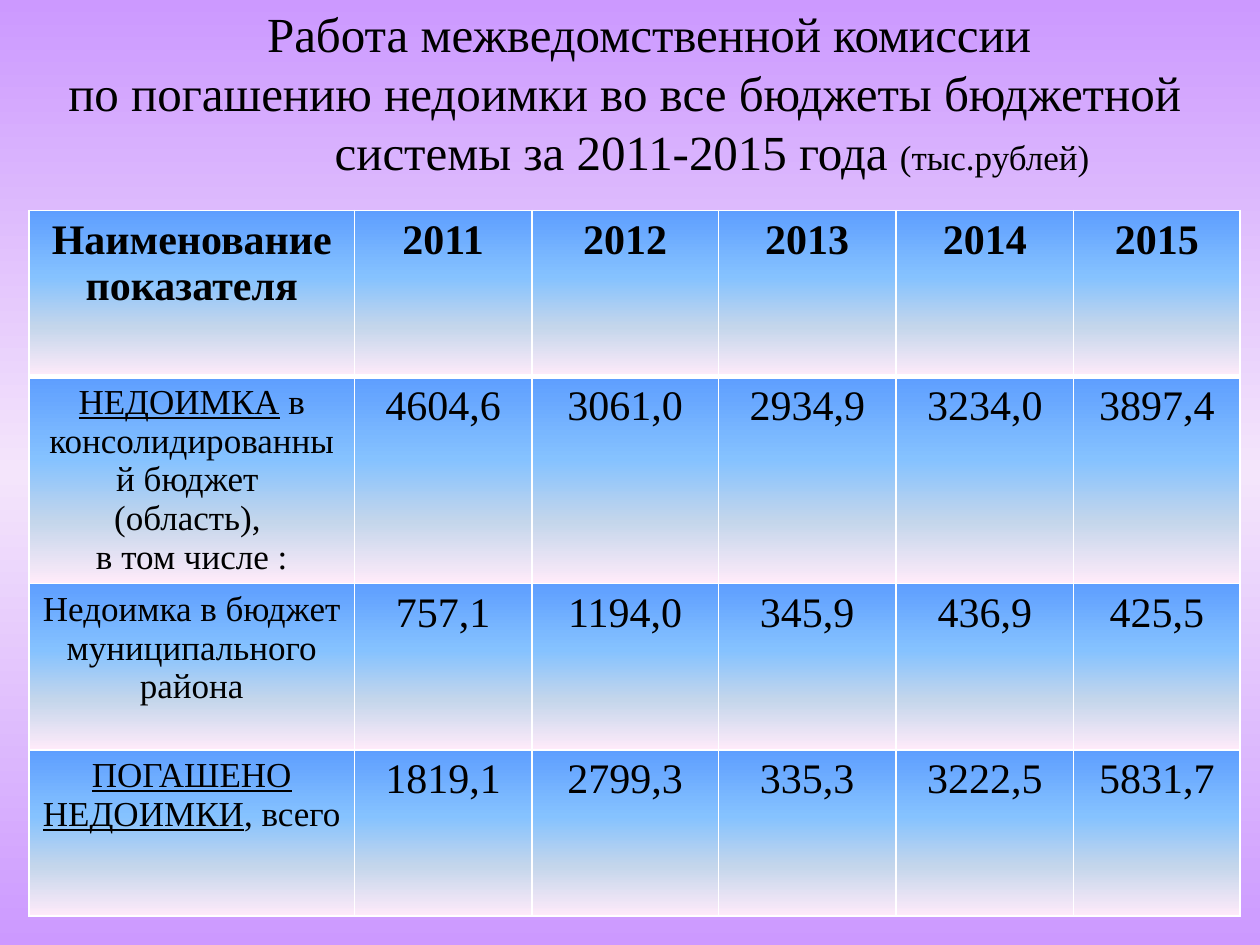
from lxml import etree
from pptx import Presentation
from pptx.dml.color import RGBColor
from pptx.enum import text
from pptx.oxml import ns
from pptx.util import Pt

COLORS = {"text": "000000", "border": "FFFFFF", "lilac": "CC99FF", "pale": "F4E5FB",
          "blue": "5E9EFF", "sky": "85C2FF", "mist": "C4D6EB", "blush": "FFEBFA"}
FONT = "Times New Roman"
PAGE_STOPS = [(0, "lilac"), (50, "pale"), (100, "lilac")]
CELL_STOPS = [(0, "blue"), (40, "sky"), (70, "mist"), (100, "blush")]


def add_gradient(parent, stops):
    """Append a top-to-bottom gradient fill."""
    grad = etree.SubElement(parent, ns.qn("a:gradFill"), rotWithShape="1")
    gs_list = etree.SubElement(grad, ns.qn("a:gsLst"))
    for pos, name in stops:
        gs = etree.SubElement(gs_list, ns.qn("a:gs"), pos=str(pos * 1000))
        etree.SubElement(gs, ns.qn("a:srgbClr"), val=COLORS[name])
    etree.SubElement(grad, ns.qn("a:lin"), ang="5400000", scaled="0")


def style(p, size, bold=False):
    p.alignment = text.PP_ALIGN.CENTER
    p.font.name = FONT
    p.font.size = Pt(size)
    p.font.bold = bold
    p.font.color.rgb = RGBColor.from_string(COLORS["text"])


prs = Presentation()
prs.slide_width, prs.slide_height = Pt(720), Pt(540)
s = prs.slides.add_slide(prs.slide_layouts[5])

# Background
s.background.fill.solid()
bg_pr = s.background.fill._xPr
bg_pr.remove(bg_pr[0])
add_gradient(bg_pr, PAGE_STOPS)
bg_pr.append(bg_pr[0])  # the effect list goes after the fill

# Title: the last two lines are offset by their own indents
title = s.shapes.title
title.left, title.top, title.width, title.height = Pt(28.8), Pt(16.56), Pt(691.2), Pt(72)
tf = title.text_frame
tf.word_wrap = True
tf.auto_size = text.MSO_AUTO_SIZE.NONE
tf.vertical_anchor = text.MSO_ANCHOR.MIDDLE
title_lines = [("Работа межведомственной комиссии ", 0),
               ("по погашению недоимки во все бюджеты бюджетной", 3),
               ("системы за 2011-2015 года ", 65)]
for i, (line, indent) in enumerate(title_lines):
    p = tf.paragraphs[0] if i == 0 else tf.add_paragraph()
    p.add_run().text = line
    style(p, 28)
    p._p.get_or_add_pPr().set("marL", str(Pt(indent)))
tf.paragraphs[1].alignment = text.PP_ALIGN.LEFT
r = p.add_run()
r.text = "(тыс.рублей)"
r.font.size = Pt(20)

# Table data: a label is a list of paragraphs, each an (underlined, plain) pair
rows = [
    ([("", "Наименование показателя")], ["2011", "2012", "2013", "2014", "2015"]),
    ([("НЕДОИМКА", " в консолидированный бюджет "), ("", "(область), "),
      ("", "в том числе :")],
     ["4604,6", "3061,0", "2934,9", "3234,0", "3897,4"]),
    ([("", "Недоимка в бюджет муниципального района")],
     ["757,1", "1194,0", "345,9", "436,9", "425,5"]),
    ([("ПОГАШЕНО НЕДОИМКИ", ", всего")],
     ["1819,1", "2799,3", "335,3", "3222,5", "5831,7"]),
]
col_widths = [185.76, 101.52, 106.56, 101.52, 101.52, 95.04]
row_height = 95.04

table = s.shapes.add_table(len(rows), len(col_widths), Pt(16.7), Pt(120.24),
                           Pt(sum(col_widths)), Pt(row_height * len(rows))).table
for col, width in zip(table.columns, col_widths):
    col.width = Pt(width)
for row in table.rows:
    row.height = Pt(row_height)

for i, (label, values) in enumerate(rows):
    header = i == 0
    for j, paragraphs in enumerate([label] + [[("", v)] for v in values]):
        cell = table.cell(i, j)

        # Text
        for k, (underlined, plain) in enumerate(paragraphs):
            p = cell.text_frame.paragraphs[0] if k == 0 else cell.text_frame.add_paragraph()
            if underlined:
                r = p.add_run()
                r.text = underlined
                r.font.underline = True
            p.add_run().text = plain
            style(p, 24 if header or j else 20, bold=header)

        # Borders, heavier around the foot of the header, then the fill
        tc_pr = cell._tc.get_or_add_tcPr()
        for side in "LRTB":
            heavy = (header and side == "B") or (i == 1 and side == "T")
            ln = etree.SubElement(tc_pr, ns.qn("a:ln" + side), w=str(Pt(3 if heavy else 1)))
            solid = etree.SubElement(ln, ns.qn("a:solidFill"))
            etree.SubElement(solid, ns.qn("a:srgbClr"), val=COLORS["border"])
        add_gradient(tc_pr, CELL_STOPS)

prs.save("out.pptx")
